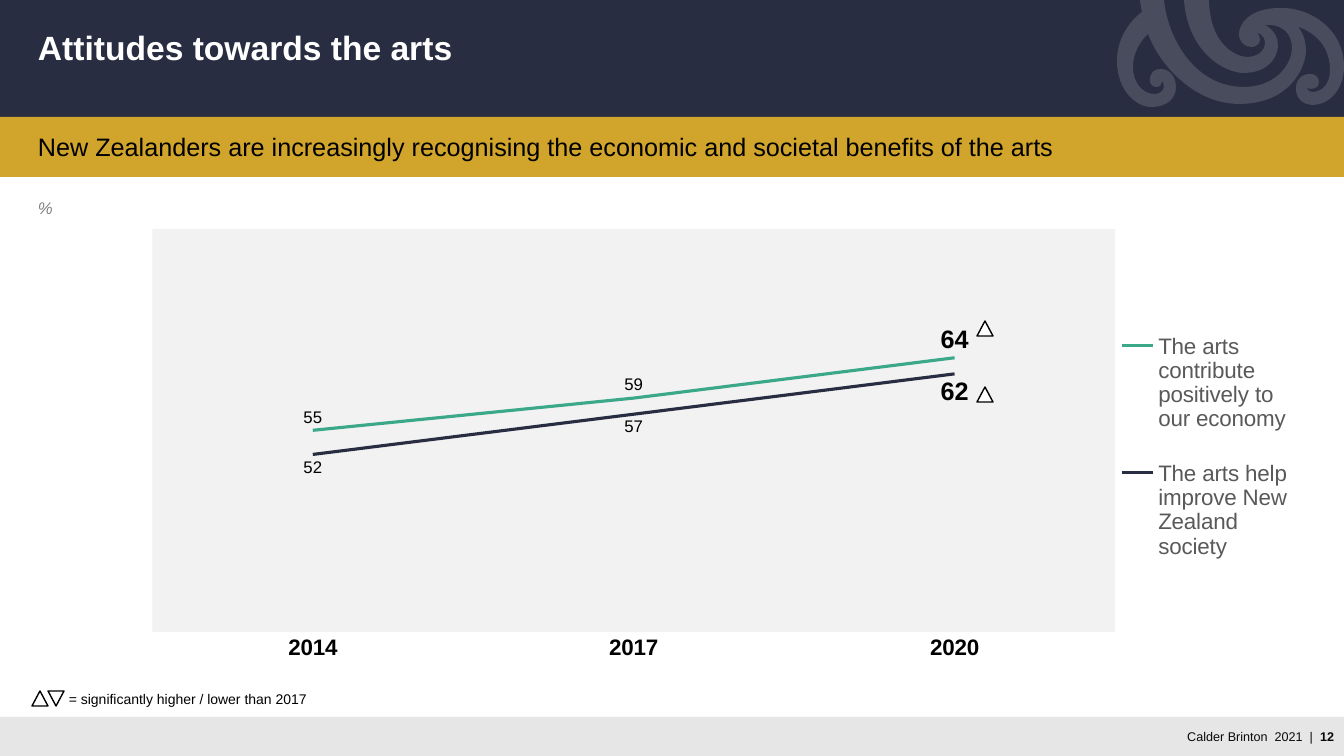
from lxml.etree import SubElement
from pptx import Presentation
from pptx.chart.data import CategoryChartData
from pptx.dml.color import RGBColor
from pptx.enum.chart import XL_CHART_TYPE, XL_LABEL_POSITION, XL_LEGEND_POSITION, XL_TICK_MARK
from pptx.enum.shapes import MSO_SHAPE
from pptx.enum.text import MSO_ANCHOR, PP_ALIGN
from pptx.oxml import parse_xml
from pptx.oxml.ns import nsdecls, qn
from pptx.util import Emu, Pt

PX = 914400 / 100.8
NAVY, GOLD, GREEN = "282D41", "D1A42B", "3AA889"
WHITE, BLACK = "FFFFFF", "000000"

# Content: bands, texts, chart and triangles, with boxes as left, top, width, height
HEADER = ((0, 0, 1344, 119), NAVY)
OTHER_BANDS = [((0, 717, 1344, 39), "E6E6E6"), ((0, 117, 1344, 60), GOLD)]
TITLE = ((28, 27, 1288, 46), [("Attitudes towards the arts", {"size": 24, "color": WHITE, "bold": True})])
SUBTITLE = ((28, 126, 1288, 40), [
    ("New Zealanders are increasingly recognising the economic and societal benefits of the arts",
     {"size": 18, "color": BLACK})])
UNIT = ((28, 193, 37, 30), [("%", {"size": 12, "color": "808080", "italic": True})])
FOOTER = ((1166, 724, 178, 25), [
    ("Calder Brinton  2021  |  ", {"size": 9, "color": "0A0A0A"}),
    ("12", {"size": 9, "color": "0A0A0A", "bold": True})])
NOTE = ((59, 685, 260, 27), [("= significantly higher / lower than 2017", {"size": 10, "color": BLACK})])
NOTE_TRIANGLES = [((32, 691), 0), ((48, 691), 180)]
CHART_TRIANGLES = [(977, 321), (977, 387)]
TRIANGLE_SIZE = (16, 15)

CHART_BOX = (106, 213, 1190, 467)
PLOT_BOX = (152, 229, 963, 403)
LEGEND_BOX = (1115, 304, 179, 285)
YEARS = ["2014", "2017", "2020"]
SERIES = [
    ("The arts contribute positively to our economy", (55, 59, 64), GREEN, XL_LABEL_POSITION.ABOVE),
    ("The arts help improve New Zealand society", (52, 57, 62), NAVY, XL_LABEL_POSITION.BELOW),
]

# Spiral ornament: two numbers are a line end, six are a curve
SPIRAL_START = (1117, 61)
SPIRAL = [
    (1117, 90, 1136, 107, 1151, 107), (1169, 107, 1176, 97, 1176, 87),
    (1176, 75, 1168, 69, 1161, 69), (1155, 69, 1150, 72, 1150, 80),
    (1150, 87, 1156, 87, 1157, 87), (1158, 87, 1162, 86, 1162, 81),
    (1162, 81, 1164, 83, 1164, 86), (1164, 88, 1163, 94, 1154, 94),
    (1144, 94, 1133, 84, 1133, 67), (1133, 47, 1148, 34, 1148, 34),
    (1162, 70, 1198, 104, 1239, 104), (1291, 104, 1306, 66, 1306, 51),
    (1306, 45, 1305, 35, 1298, 27), (1298, 27, 1330, 35, 1330, 70),
    (1330, 89, 1317, 92, 1313, 92), (1308, 92, 1307, 88, 1307, 88),
    (1310, 90, 1319, 89, 1319, 83), (1319, 75, 1313, 74, 1310, 74),
    (1306, 74, 1296, 76, 1296, 89), (1296, 100, 1305, 105, 1313, 105),
    (1327, 105, 1344, 92, 1344, 66), (1344, 32, 1314, 8, 1281, 8),
    (1247, 8, 1239, 26, 1239, 34), (1239, 42, 1245, 47, 1251, 47),
    (1258, 47, 1260, 42, 1260, 40), (1260, 37, 1259, 34, 1257, 33),
    (1257, 33, 1265, 34, 1265, 43), (1265, 52, 1256, 57, 1247, 57),
    (1239, 57, 1210, 48, 1209, 0), (1184, 0),
    (1188, 52, 1224, 73, 1244, 73), (1264, 73, 1278, 61, 1278, 45),
    (1278, 31, 1265, 25, 1265, 25), (1282, 24, 1292, 33, 1292, 48),
    (1292, 65, 1275, 87, 1244, 87), (1195, 87, 1168, 39, 1164, 0),
    (1140, 0), (1141, 7, 1142, 12, 1142, 12), (1142, 12, 1117, 29, 1117, 61),
]


def emu(*lengths):
    return [Emu(round(length * PX)) for length in lengths]


def paint(fill, color):
    fill.solid()
    fill.fore_color.rgb = RGBColor.from_string(color)


def set_font(font, size, color, **formats):
    font.color.rgb = RGBColor.from_string(color)
    for name, value in {"name": "Arial", "size": Pt(size), **formats}.items():
        setattr(font, name, value)


def add_shape(shapes, kind, box, color, outline=None):
    shape = shapes.add_shape(kind, *emu(*box))
    shape.shadow.inherit = False
    paint(shape.fill, color)
    if outline:
        paint(shape.line.fill, outline)
        shape.line.width = Pt(1)
    else:
        shape.line.fill.background()
    return shape


def add_triangle(shapes, corner):
    return add_shape(shapes, MSO_SHAPE.ISOSCELES_TRIANGLE, corner + TRIANGLE_SIZE, WHITE, BLACK)


def add_text(shapes, content, wrap=True, anchor=MSO_ANCHOR.TOP, align=PP_ALIGN.LEFT, spacing=1.0):
    box, runs = content
    frame = shapes.add_textbox(*emu(*box)).text_frame
    frame.word_wrap, frame.vertical_anchor = wrap, anchor
    paragraph = frame.paragraphs[0]
    paragraph.alignment, paragraph.line_spacing = align, spacing
    for text, formats in runs:
        run = paragraph.add_run()
        run.text = text
        set_font(run.font, **formats)


def add_spiral(shapes):
    points = [segment[i:i + 2] for segment in SPIRAL for i in range(0, len(segment), 2)]
    builder = shapes.build_freeform(*emu(*SPIRAL_START))
    builder.add_line_segments([emu(*point) for point in points], close=True)
    spiral = builder.convert_to_shape()
    spiral.shadow.inherit = False
    paint(spiral.fill, WHITE)
    spiral.line.fill.background()
    color = spiral.fill._xPr.find(qn("a:solidFill"))[0]
    SubElement(color, qn("a:alpha"), val="15000")

    # Join each three points of a curve into one Bézier segment
    lines = iter(list(spiral._element.iter(qn("a:lnTo"))))
    for segment in SPIRAL:
        parts = [next(lines) for _ in range(len(segment) // 2)]
        if len(parts) == 3:
            curve = parse_xml(f'<a:cubicBezTo {nsdecls("a")}/>')
            parts[0].addprevious(curve)
            for part in parts:
                curve.append(part[0])
                part.getparent().remove(part)


def layout_xml(box, inner=False):
    left, top, width, height = CHART_BOX
    values = {"x": (box[0] - left) / width, "y": (box[1] - top) / height,
              "w": box[2] / width, "h": box[3] / height}
    target = '<c:layoutTarget val="inner"/>' if inner else ""
    modes = '<c:xMode val="edge"/><c:yMode val="edge"/>'
    sizes = "".join(f'<c:{name} val="{value:.3f}"/>' for name, value in values.items())
    return parse_xml(f'<c:layout {nsdecls("c")}><c:manualLayout>{target}{modes}{sizes}'
                     '</c:manualLayout></c:layout>')


def set_layout(parent, layout, position):
    for old in parent.findall(qn("c:layout")):
        parent.remove(old)
    parent.insert(position, layout)


def add_line_chart(shapes):
    data = CategoryChartData()
    data.categories = YEARS
    for name, values, _, _ in SERIES:
        data.add_series(name, values)
    chart = shapes.add_chart(XL_CHART_TYPE.LINE, *emu(*CHART_BOX), data).chart
    chart.has_title = False
    set_font(chart.font, 10, BLACK)

    # Axes
    years, scale = chart.category_axis, chart.value_axis
    years.major_tick_mark = XL_TICK_MARK.NONE
    years.format.line.fill.background()
    set_font(years.tick_labels.font, 16, BLACK, bold=True)
    for name, value in {"minimum_scale": 30, "maximum_scale": 80, "visible": False,
                        "has_major_gridlines": False}.items():
        setattr(scale, name, value)

    # Legend
    chart.has_legend = True
    chart.legend.position = XL_LEGEND_POSITION.RIGHT
    chart.legend.include_in_layout = False
    set_font(chart.legend.font, 16, "595959")
    set_layout(chart.legend._element, layout_xml(LEGEND_BOX), 1)

    # Lines and labels, the last year larger
    chart.plots[0].vary_by_categories = False
    for series, (_, values, color, position) in zip(chart.plots[0].series, SERIES):
        series.smooth = False
        paint(series.format.line.fill, color)
        series.format.line.width = Pt(2.25)
        labels = series.data_labels
        labels.show_value, labels.position = True, position
        set_font(labels.font, 12, BLACK)
        last_label = series.points[len(values) - 1].data_label
        set_font(last_label.font, 18, BLACK, bold=True)
        last_label.position = position

    # Plot area
    plot_area = chart._chartSpace.chart.plotArea
    set_layout(plot_area, layout_xml(PLOT_BOX, inner=True), 0)
    plot_area.append(parse_xml(f'<c:spPr {nsdecls("c", "a")}><a:solidFill><a:srgbClr val="F2F2F2"/>'
                               '</a:solidFill><a:ln><a:noFill/></a:ln></c:spPr>'))


presentation = Presentation()
presentation.slide_width, presentation.slide_height = emu(1344, 756)
slide = presentation.slides.add_slide(presentation.slide_layouts[6])
shapes = slide.shapes

# Bands and headings
add_shape(shapes, MSO_SHAPE.RECTANGLE, *HEADER)
add_spiral(shapes)
for band in OTHER_BANDS:
    add_shape(shapes, MSO_SHAPE.RECTANGLE, *band)
add_text(shapes, FOOTER, False, MSO_ANCHOR.MIDDLE, PP_ALIGN.RIGHT)
add_text(shapes, TITLE, spacing=0.9)
add_text(shapes, SUBTITLE)

# Chart and its key
add_line_chart(shapes)
add_text(shapes, UNIT, False)
key = shapes.add_group_shape().shapes
add_text(key, NOTE, False, MSO_ANCHOR.MIDDLE)
for corner, rotation in NOTE_TRIANGLES:
    add_triangle(key, corner).rotation = rotation
for corner in CHART_TRIANGLES:
    add_triangle(shapes, corner)

presentation.save("out.pptx")
